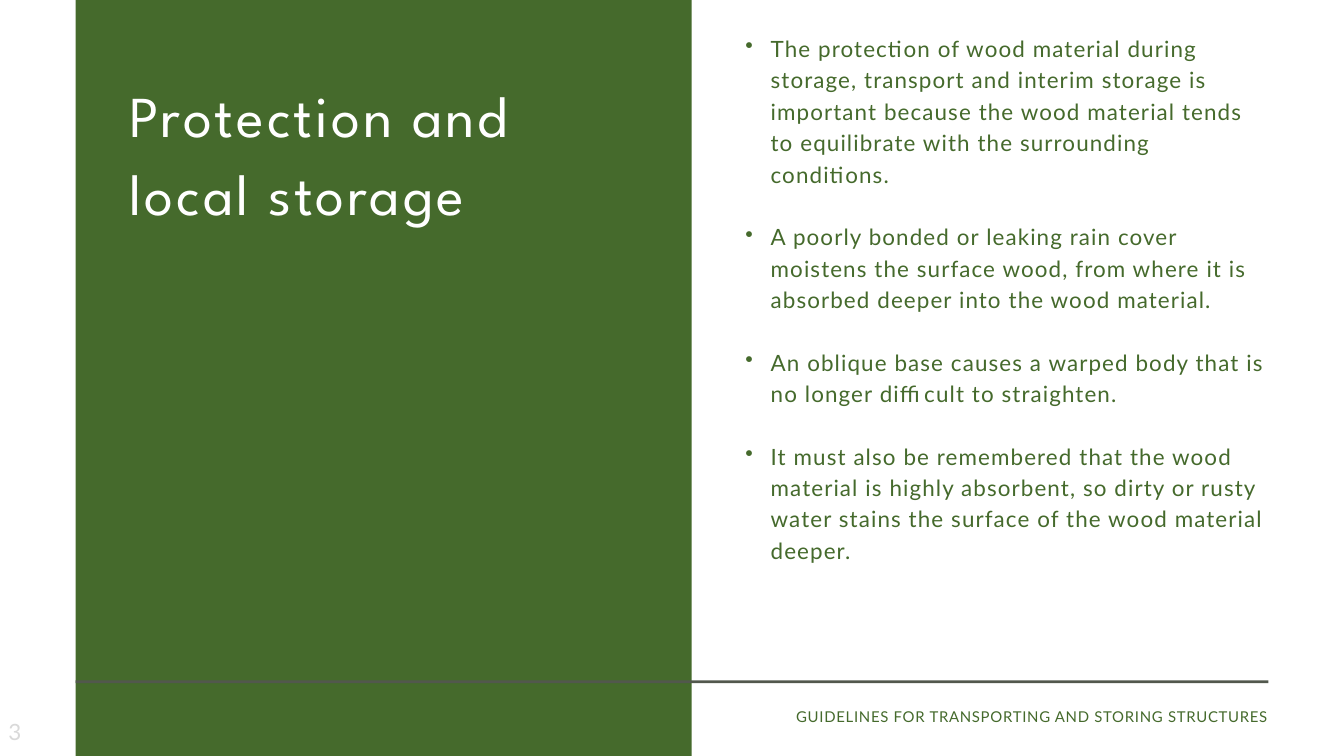
"""Build the slide on protection and local storage of wood."""
from pptx import Presentation
from pptx.dml.color import RGBColor as RGB
from pptx.enum.shapes import MSO_SHAPE as SHAPE
from pptx.enum.text import MSO_ANCHOR as ANCHOR, PP_ALIGN as ALIGN
from pptx.oxml.xmlchemy import OxmlElement
from pptx.util import Pt

PX = 9525
COLORS = {"green": "456A2C", "rule": "52584D", "white": "FFFFFF", "number": "D9D9D9"}
BULLET_INDENT = 36

prs = Presentation()
prs.slide_width, prs.slide_height = 1920 * PX, 1080 * PX
s = prs.slides.add_slide(prs.slide_layouts[6])


def add_block(box, color):
    sp = s.shapes.add_shape(SHAPE.RECTANGLE, *(v * PX for v in box))
    sp.shadow.inherit = False
    sp.fill.solid()
    sp.fill.fore_color.rgb = RGB.from_string(COLORS[color])
    sp.line.fill.background()


def add_text(box, texts, font, size, color, tracking, para=None, frame=None, bullet=False):
    tf = s.shapes.add_textbox(*(v * PX for v in box)).text_frame
    margins = dict.fromkeys(("margin_left", "margin_top", "margin_right", "margin_bottom"), 0)
    for name, value in {"word_wrap": True, **margins, **(frame or {})}.items():
        setattr(tf, name, value)
    for i, text in enumerate(texts):
        p = tf.paragraphs[0] if i == 0 else tf.add_paragraph()
        for name, value in (para or {}).items():
            setattr(p, name, value)
        if i:
            p.space_before = p.line_spacing
        if bullet:
            pPr = p._p.get_or_add_pPr()
            pPr.set("marL", str(BULLET_INDENT * PX))
            pPr.set("indent", str(-BULLET_INDENT * PX))
            bu = OxmlElement("a:buChar")
            bu.set("char", "•")
            pPr.append(bu)
        r = p.add_run()
        r.text = text
        r.font.name, r.font.size = font, Pt(size)
        r.font.color.rgb = RGB.from_string(COLORS[color])
        r._r.get_or_add_rPr().set("spc", str(tracking))


points = [
    "The protection of wood material during storage, transport and interim storage is "
    "important because the wood material tends to equilibrate with the surrounding conditions.",
    "A poorly bonded or leaking rain cover moistens the surface wood, from where it is "
    "absorbed deeper into the wood material.",
    "An oblique base causes a warped body that is no longer difficult to straighten.",
    "It must also be remembered that the wood material is highly absorbent, so dirty or "
    "rusty water stains the surface of the wood material deeper.",
]
add_text((1065, 44, 747, 729), points, "Lato", 24, "green", 120,
         para={"line_spacing": Pt(33.6)}, bullet=True)

add_block((108, 0, 880, 1080), "green")
add_block((108, 972, 1704, 4), "rule")

add_text((185, 101, 726, 223), ["Protection and local storage"], "League Spartan", 62,
         "white", 310, para={"line_spacing": Pt(83.7)})
add_text((2, 1026, 224, 38), ["3"], "Lato", 24, "number", 120,
         frame={"margin_left": 10 * PX, "vertical_anchor": ANCHOR.MIDDLE})
add_text((1013, 1007, 799, 73), ["GUIDELINES FOR TRANSPORTING AND STORING STRUCTURES"],
         "Lato", 16, "green", 80,
         para={"line_spacing": Pt(22.4), "alignment": ALIGN.RIGHT})

prs.save("out.pptx")
